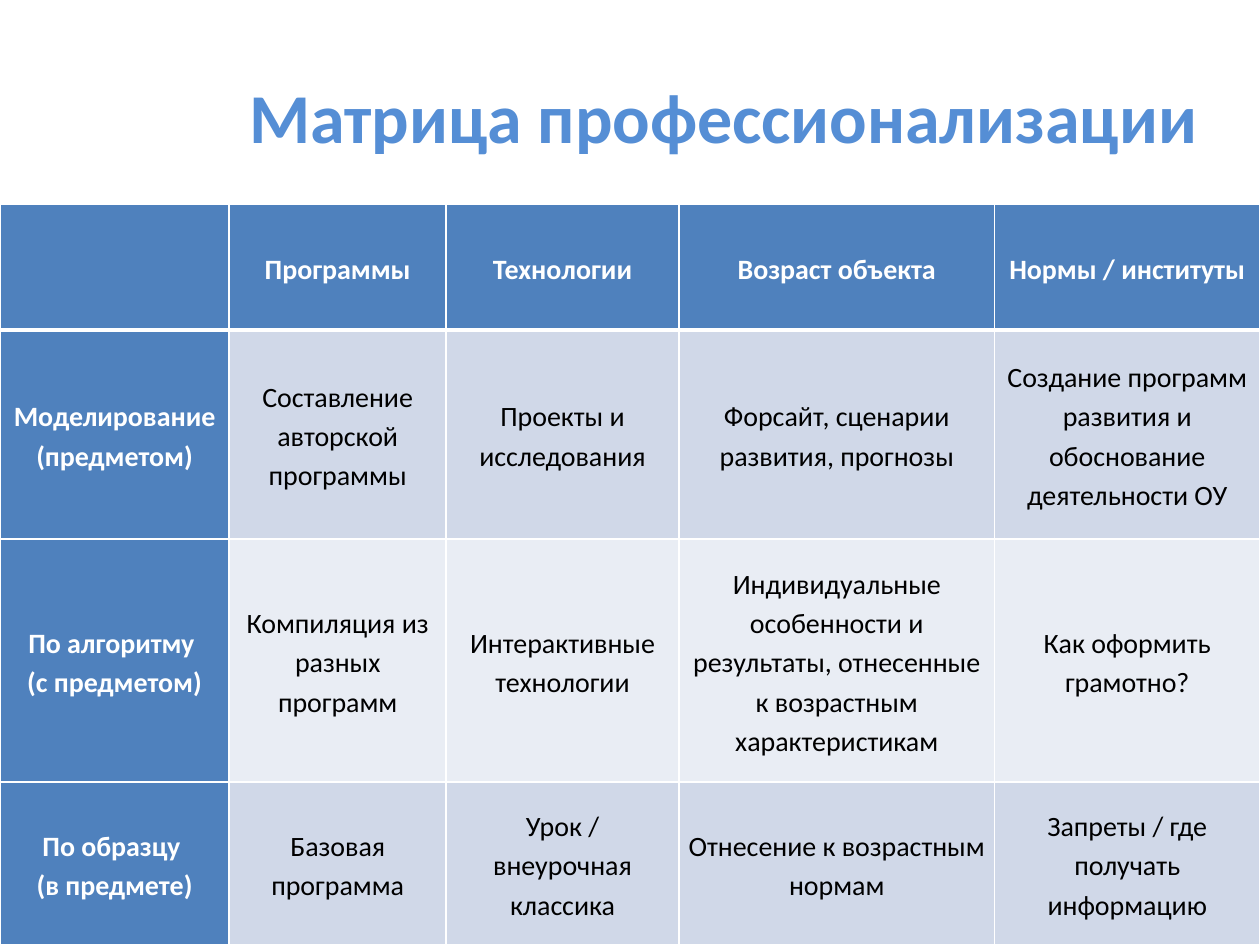
"""Build the slide with the professionalization matrix table."""
import pptx
import pptx.dml.color
import pptx.enum.text
import pptx.oxml
import pptx.oxml.ns
import pptx.util

Pt = pptx.util.Pt
RGBColor = pptx.dml.color.RGBColor
CENTER = pptx.enum.text.PP_ALIGN.CENTER
MIDDLE = pptx.enum.text.MSO_ANCHOR.MIDDLE

TITLE = "Матрица профессионализации"
ROWS = [
    ["", "Программы", "Технологии", "Возраст объекта", "Нормы / институты"],
    ["Моделирование (предметом)", "Составление авторской программы",
     "Проекты и исследования", "Форсайт, сценарии развития, прогнозы",
     "Создание программ развития и обоснование деятельности ОУ"],
    ["По алгоритму \n(с предметом)", "Компиляция из разных программ",
     "Интерактивные технологии",
     "Индивидуальные особенности и результаты, отнесенные к возрастным характеристикам",
     "Как оформить грамотно?"],
    ["По образцу \n(в предмете)", "Базовая программа",
     "Урок / внеурочная классика", "Отнесение к возрастным нормам",
     "Запреты / где получать информацию"],
]
COL_WIDTHS = [131, 124, 133, 180.5, 151.5]
ROW_HEIGHTS = [72, 119.5, 139, 93]
TABLE_TOP = 116.5

FONT = "Calibri"
TITLE_BLUE = RGBColor(0x55, 0x8E, 0xD5)
HEADER_BLUE = RGBColor(0x4F, 0x81, 0xBD)
BANDS = [RGBColor(0xE9, 0xED, 0xF4), RGBColor(0xD0, 0xD8, 0xE8)]
WHITE = RGBColor(0xFF, 0xFF, 0xFF)
BLACK = RGBColor(0, 0, 0)


def format_paragraph(p, size, color, bold):
    p.alignment = CENTER
    p.font.name = FONT
    p.font.size = Pt(size)
    p.font.bold = bold
    p.font.color.rgb = color


def add_borders(cell, widths):
    tc_pr = cell._tc.get_or_add_tcPr()
    for side, width in widths.items():
        tc_pr.append(pptx.oxml.parse_xml(
            f'<a:ln{side} {pptx.oxml.ns.nsdecls("a")} w="{Pt(width)}">'
            f'<a:solidFill><a:srgbClr val="{WHITE}"/></a:solidFill></a:ln{side}>'))


def fill_cell(cell, text, row, col):
    header = row == 0 or col == 0
    add_borders(cell, {"L": 1, "R": 1, "T": 3 if row == 1 else 1, "B": 3 if row == 0 else 1})
    cell.fill.solid()
    cell.fill.fore_color.rgb = HEADER_BLUE if header else BANDS[row % 2]
    cell.vertical_anchor = MIDDLE
    cell.margin_left = cell.margin_right = Pt(5)
    cell.margin_top = cell.margin_bottom = 0
    cell.text_frame.text = text
    for p in cell.text_frame.paragraphs:
        p.line_spacing = 1.15
        format_paragraph(p, 16, WHITE if header else BLACK, header)


def main():
    prs = pptx.Presentation()
    prs.slide_width, prs.slide_height = Pt(720), Pt(540)
    s = prs.slides.add_slide(prs.slide_layouts[5])

    title = s.shapes.title
    title.left, title.top, title.width, title.height = Pt(106.5), Pt(21), Pt(613.5), Pt(90)
    title.text_frame.text = TITLE
    title.text_frame.vertical_anchor = MIDDLE
    format_paragraph(title.text_frame.paragraphs[0], 40, TITLE_BLUE, True)

    table = s.shapes.add_table(len(ROWS), len(COL_WIDTHS), 0, Pt(TABLE_TOP),
                               Pt(sum(COL_WIDTHS)), Pt(sum(ROW_HEIGHTS))).table
    for column, width in zip(table.columns, COL_WIDTHS):
        column.width = Pt(width)
    for table_row, height in zip(table.rows, ROW_HEIGHTS):
        table_row.height = Pt(height)
    for row, texts in enumerate(ROWS):
        for col, text in enumerate(texts):
            fill_cell(table.cell(row, col), text, row, col)

    prs.save("out.pptx")


if __name__ == "__main__":
    main()
